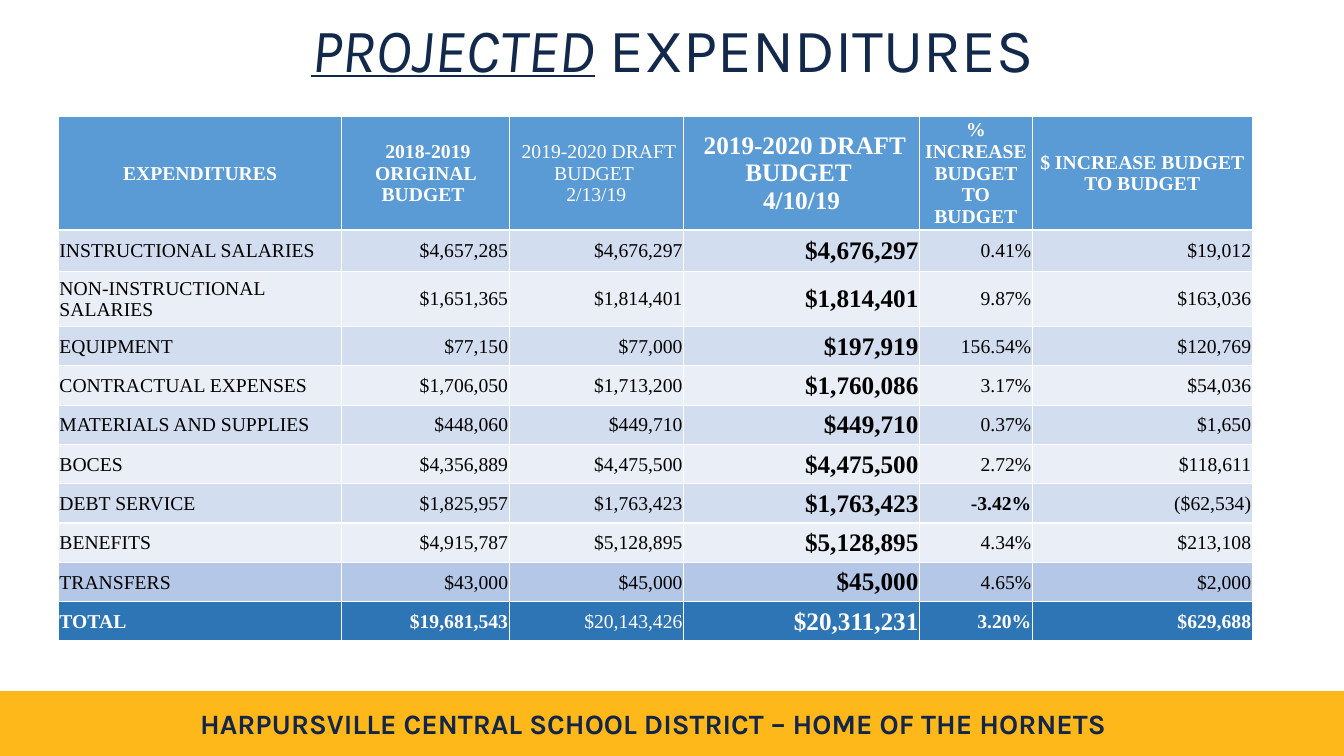
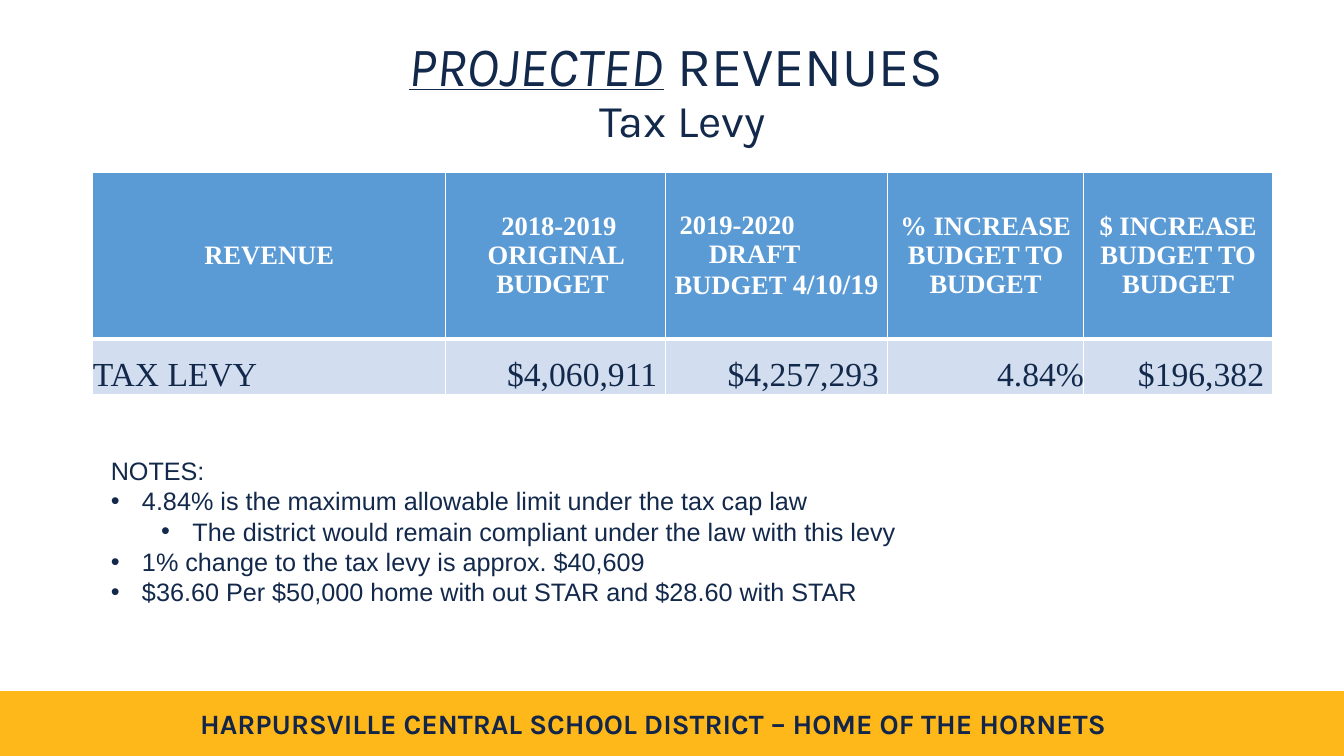
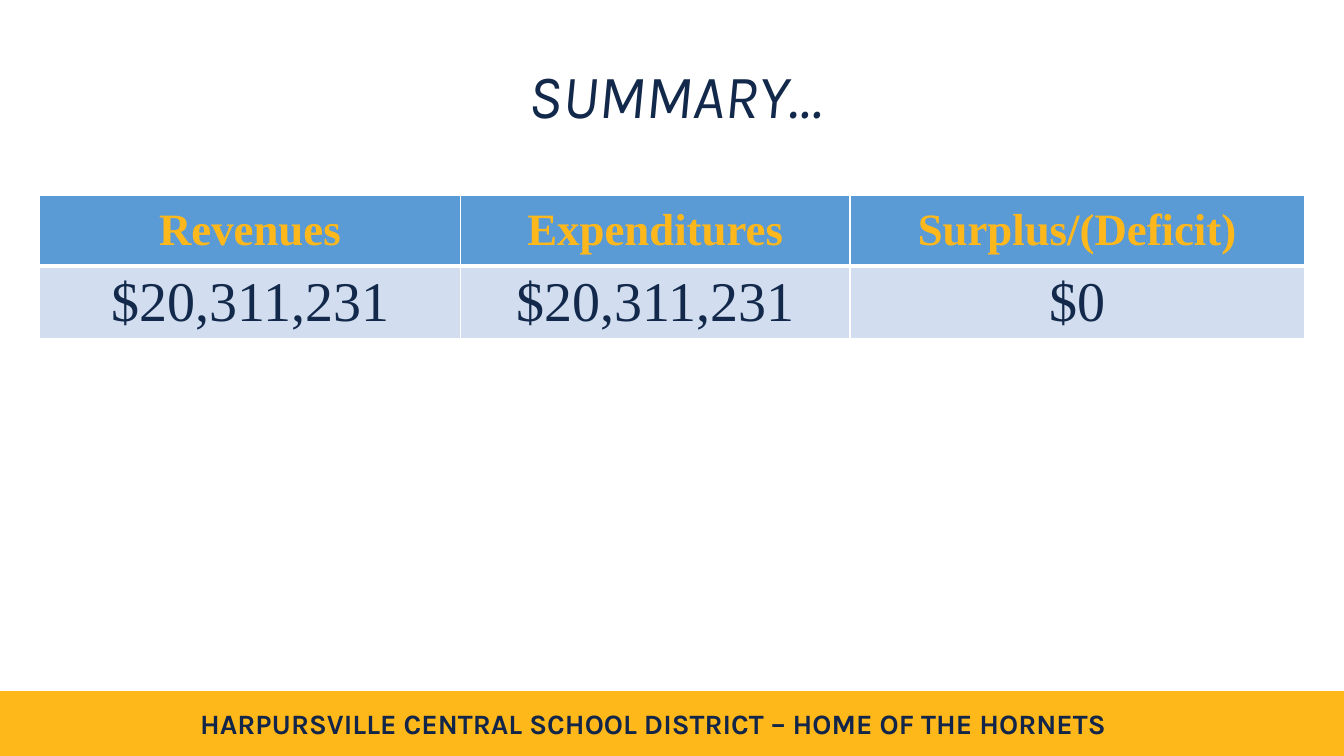
from lxml.etree import SubElement
from pptx import Presentation
from pptx.dml.color import RGBColor
from pptx.enum.shapes import MSO_SHAPE
from pptx.enum.text import MSO_ANCHOR, MSO_AUTO_SIZE, PP_ALIGN
from pptx.oxml.ns import qn
from pptx.util import Emu, Inches, Pt

WHITE = RGBColor(0xFF, 0xFF, 0xFF)
BLACK = RGBColor(0x00, 0x00, 0x00)
NAVY = RGBColor(0x13, 0x29, 0x4B)
FOOTER_NAVY = RGBColor(0x13, 0x26, 0x49)
GOLD = RGBColor(0xFF, 0xB8, 0x19)
HEADER_GOLD = RGBColor(0xFF, 0xB8, 0x1C)
BLUE = RGBColor(0x5B, 0x9B, 0xD5)
DARK_BLUE = RGBColor(0x2E, 0x75, 0xB6)
MID_BLUE = RGBColor(0xB4, 0xC7, 0xE7)
BAND_DARK = RGBColor(0xD2, 0xDE, 0xEF)
BAND_LIGHT = RGBColor(0xEA, 0xEF, 0xF7)
SERIF, SANS, DISPLAY = "Times New Roman", "Arial", "Karla"
LEFT, CENTER, RIGHT = PP_ALIGN.LEFT, PP_ALIGN.CENTER, PP_ALIGN.RIGHT
MIDDLE, BOTTOM = MSO_ANCHOR.MIDDLE, MSO_ANCHOR.BOTTOM

FOOTER = "HARPURSVILLE CENTRAL SCHOOL DISTRICT – HOME OF THE HORNETS"

EXPENDITURES = [
    ("EXPENDITURES", " 2018-2019 ORIGINAL BUDGET ", " 2019-2020 DRAFT BUDGET \n2/13/19",
     " 2019-2020 DRAFT BUDGET \n4/10/19", "% INCREASE BUDGET TO BUDGET",
     "$ INCREASE BUDGET TO BUDGET"),
    ("INSTRUCTIONAL SALARIES", "$4,657,285", "$4,676,297", "$4,676,297", "0.41%", "$19,012"),
    ("NON-INSTRUCTIONAL SALARIES", "$1,651,365", "$1,814,401", "$1,814,401", "9.87%", "$163,036"),
    ("EQUIPMENT", "$77,150", "$77,000", "$197,919", "156.54%", "$120,769"),
    ("CONTRACTUAL EXPENSES", "$1,706,050", "$1,713,200", "$1,760,086", "3.17%", "$54,036"),
    ("MATERIALS AND SUPPLIES", "$448,060", "$449,710", "$449,710", "0.37%", "$1,650"),
    ("BOCES", "$4,356,889", "$4,475,500", "$4,475,500", "2.72%", "$118,611"),
    ("DEBT SERVICE", "$1,825,957", "$1,763,423", "$1,763,423", "-3.42%", "($62,534)"),
    ("BENEFITS", "$4,915,787", "$5,128,895", "$5,128,895", "4.34%", "$213,108"),
    ("TRANSFERS", "$43,000", "$45,000", "$45,000", "4.65%", "$2,000"),
    ("TOTAL", "$19,681,543", "$20,143,426", "$20,311,231", "3.20%", "$629,688"),
]
TAX_LEVY = [
    ("REVENUE", " 2018-2019 ORIGINAL BUDGET ", "", "% INCREASE BUDGET TO BUDGET",
     "$ INCREASE BUDGET TO BUDGET"),
    ("TAX LEVY", "$4,060,911 ", "$4,257,293 ", "4.84%", "$196,382 "),
]
DRAFT_HEADER = [("2019-2020", 0.14), ("DRAFT", 0.43), ("BUDGET ", 0.09)]
SUMMARY = [
    ("Revenues", "Expenditures", "Surplus/(Deficit)"),
    ("$20,311,231", "$20,311,231", "$0"),
]
NOTES = [
    (None, "NOTES:"),
    (0, "4.84% is the maximum allowable limit under the tax cap law"),
    (1, "The district would remain compliant under the law with this levy"),
    (0, "1% change to the tax levy is approx. $40,609"),
    (0, "$36.60 Per $50,000 home with out STAR and $28.60 with STAR"),
]


def add_text(tf, text, size=14, color=NAVY, font=SERIF, bold=False, italic=False,
             underline=False, align=LEFT, spacing=None, indent=0, level=None, inline=False):
    for line in text.split("\n"):
        p = tf.paragraphs[-1]
        if p.runs and not inline:
            p = tf.add_paragraph()
        if not inline:
            p.alignment = align
            if spacing:
                p.line_spacing = spacing
            pPr = p._p.get_or_add_pPr()
            if indent:
                pPr.set("marL", str(Inches(indent)))
            if level is not None:
                p.level = level
                pPr.set("marL", str(Inches(0.31 + 0.5 * level)))
                pPr.set("indent", str(Inches(-0.31)))
                SubElement(pPr, qn("a:buFont"), typeface=SANS)
                SubElement(pPr, qn("a:buChar"), char="•")
        r = p.add_run()
        r.text = line
        f = r.font
        f.name, f.size, f.color.rgb = font, Pt(size), color
        f.bold, f.italic, f.underline = bold, italic, underline


def add_box(s, left, top, width, height):
    tf = s.shapes.add_textbox(*map(Inches, (left, top, width, height))).text_frame
    tf.word_wrap = True
    return tf


def add_footer(s, layout):
    band = s.shapes.add_shape(MSO_SHAPE.RECTANGLE, 0, Inches(6.86), prs.slide_width, Inches(0.63))
    band.shadow.inherit = False
    band.fill.solid()
    band.fill.fore_color.rgb = GOLD
    band.line.color.rgb = GOLD
    band.line.width = Pt(1)
    add_text(add_box(s, 1.76, 6.96, 9.44, 0.44), FOOTER, size=20, color=FOOTER_NAVY,
             font=DISPLAY, bold=True, align=CENTER)
    for sp in list(s.shapes)[-2:]:
        layout.shapes._spTree.append(sp._element)


def add_title(s, left, top, runs):
    sp = s.shapes.title
    sp.left, sp.top, sp.width, sp.height = map(Inches, (left, top, 11.5, 1.04))
    sp.fill.solid()
    sp.fill.fore_color.rgb = WHITE
    tf = sp.text_frame
    tf.word_wrap = True
    tf.auto_size = MSO_AUTO_SIZE.NONE
    tf.vertical_anchor = MIDDLE
    for text, fmt in runs:
        add_text(tf, text, font=DISPLAY, align=CENTER, spacing=0.9, **fmt)


def set_borders(cell, top, bottom):
    tcPr = cell._tc.get_or_add_tcPr()
    for side, width in (("L", 1), ("R", 1), ("T", top), ("B", bottom)):
        ln = SubElement(tcPr, qn(f"a:ln{side}"), w=str(Pt(width)))
        fill = SubElement(ln, qn("a:solidFill"))
        SubElement(fill, qn("a:srgbClr"), val=str(WHITE))


def add_table(s, left, top, cols, rows, data, style, rule, margins=None):
    t = s.shapes.add_table(len(rows), len(cols), Inches(left), Inches(top),
                           Inches(sum(cols)), Inches(sum(rows))).table
    t.first_row = t.horz_banding = False
    for column, width in zip(t.columns, cols):
        column.width = Inches(width)
    for row, height in zip(t.rows, rows):
        row.height = Inches(height)
    for i, values in enumerate(data):
        for j, value in enumerate(values):
            cell = t.cell(i, j)
            fill, anchor, fmt = style(i, j)
            set_borders(cell, rule if i == 1 else 1, rule if i == 0 else 1)
            cell.fill.solid()
            cell.fill.fore_color.rgb = fill
            cell.vertical_anchor = anchor
            if margins:
                (cell.margin_left, cell.margin_top,
                 cell.margin_right, cell.margin_bottom) = map(Inches, margins)
            if value:
                add_text(cell.text_frame, value, **fmt)
    return t


def expenditure_style(i, j):
    last = len(EXPENDITURES) - 1
    header, total = i == 0, i == last
    fill = {0: BLUE, last - 1: MID_BLUE, last: DARK_BLUE}.get(
        i, BAND_DARK if i % 2 else BAND_LIGHT)
    bold = j == 3 or ((header or total) and j != 2) or EXPENDITURES[i][j].startswith("-")
    return fill, MIDDLE, dict(
        size=18 if j == 3 else 14, bold=bold, color=WHITE if header or total else BLACK,
        align=CENTER if header else RIGHT if j else LEFT)


def levy_style(i, j):
    if i == 0:
        return BLUE, MIDDLE, dict(size=19, color=WHITE, bold=True, align=CENTER)
    return BAND_DARK, BOTTOM, dict(size=24, align=RIGHT if j else LEFT)


def summary_style(i, j):
    if i == 0:
        return BLUE, MIDDLE, dict(size=32, color=HEADER_GOLD, bold=True, align=CENTER)
    return BAND_DARK, MIDDLE, dict(size=40, align=CENTER)


prs = Presentation()
prs.slide_width, prs.slide_height = Inches(13.33), Inches(7.5)
layout = prs.slide_layouts[5]
expenditures, levy, summary = [prs.slides.add_slide(layout) for _ in range(3)]
add_footer(expenditures, layout)

add_title(expenditures, 0.92, 0, [
    ("PROJECTED", dict(size=44, italic=True, underline=True)),
    (" EXPENDITURES", dict(size=44, inline=True))])
add_table(expenditures, 0.58, 1.15, [2.81, 1.66, 1.73, 2.34, 1.12, 2.18],
          [1.13, 0.41, 0.55] + [0.39] * 8, EXPENDITURES, expenditure_style, 1.5,
          (0.01, 0.01, 0.01, 0))

add_title(levy, 1.02, 0.4, [
    ("PROJECTED", dict(size=39.6, italic=True, underline=True)),
    (" REVENUES ", dict(size=39.6, inline=True)),
    ("Tax Levy", dict(size=32.4))])
notes = add_box(levy, 1, 4.47, 9.88, 1.62)
for level, text in NOTES:
    add_text(notes, text, size=18, font=SANS, level=level)
levy_table = add_table(levy, 0.92, 1.71, [3.5, 2.18, 2.2, 1.95, 1.87], [1.65, 0.55],
                       TAX_LEVY, levy_style, 3, (0, 0, 0, 0))
draft = levy_table.cell(0, 2).text_frame
for text, indent in DRAFT_HEADER:
    add_text(draft, text, size=19, color=WHITE, bold=True, indent=indent)
add_text(draft, "4/10/19", size=20, color=WHITE, bold=True, inline=True)

add_title(summary, 0.95, 0.46, [("SUMMARY…", dict(size=44, italic=True))])
add_table(summary, 0.39, 1.94, [4.18, 3.86, 4.51], [0.7, 0.7], SUMMARY, summary_style, 3)

prs.save("out.pptx")
